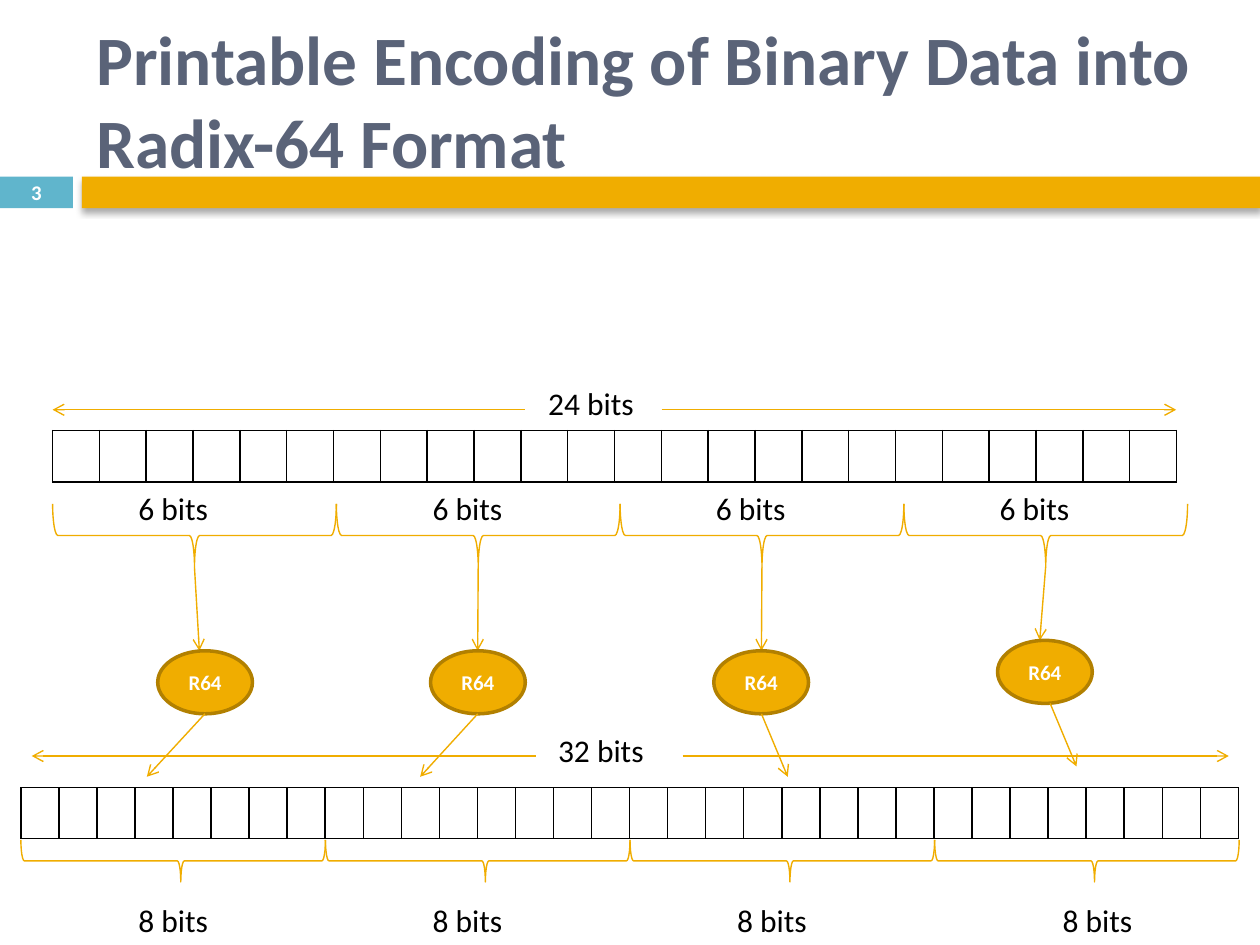
from pptx import Presentation
from pptx.dml.color import RGBColor
from pptx.enum.shapes import MSO_CONNECTOR as Link, MSO_SHAPE as Kind
from pptx.enum.text import MSO_ANCHOR as Anchor, PP_ALIGN as Align
from pptx.oxml import parse_xml
from pptx.oxml.ns import nsdecls
from pptx.util import Cm, Pt

GOLD = RGBColor(0xF0, 0xAD, 0x00)
BROWN = RGBColor(0xB2, 0x80, 0x00)
BLUE = RGBColor(0x60, 0xB5, 0xCC)
SLATE = RGBColor(0x5A, 0x63, 0x78)
WHITE = RGBColor(0xFF, 0xFF, 0xFF)
BLACK = RGBColor(0x00, 0x00, 0x00)
FONT = "Calibri"
THIN = Pt(0.79)
NS = nsdecls("a")

# Content, lengths in cm
TITLE = "Printable Encoding of Binary Data into Radix-64 Format"
PAGE = "3"

# Bit rows: count, left, top, width, height, cell fill
ROWS = [
    (24, 1.06, 8.68, 22.66, 1.04, None),
    (32, 0.42, 15.88, 24.56, 1.02, WHITE),
]
# Brace rows: left, top, width of each, height, adjustments
BRACES = [
    (1.06, 10.16, 5.72, 1.27, (0.083, 0.5)),
    (0.42, 16.93, 6.14, 0.85, (0.083, 0.475)),
]
# Spans: label, label left, label top, line y, (from, to) of each arrow
SPANS = [
    ("24 bits", 10.8, 7.62, 8.26, [(10.58, 1.06), (13.34, 23.71)]),
    ("32 bits", 11.0, 14.61, 15.24, [(10.8, 0.64), (13.76, 24.77)]),
]
# Group labels: text, top, lefts
GROUPS = [
    ("6 bits", 9.74, (2.54, 8.47, 14.18, 19.9)),
    ("8 bits", 18.03, (2.54, 8.47, 14.61, 21.17)),
]
# Encoders: left, top, x of arrow in, x of arrow out, x of its end
CODER = "R64"
CODERS = [
    (3.18, 13.12, 4.02, 4.13, 2.96),
    (8.68, 13.12, 9.63, 9.63, 8.47),
    (14.39, 13.12, 15.35, 15.35, 15.88),
    (20.11, 12.91, 20.96, 21.17, 21.7),
]
OVAL_W, OVAL_H, DROP = 1.91, 1.27, 1.27

deck = Presentation()
deck.slide_width, deck.slide_height = Cm(25.4), Cm(19.05)
slide = deck.slides.add_slide(deck.slide_layouts[6])
shapes = slide.shapes


def write(shape, text, size, color, bold=False, align=Align.LEFT, anchor=Anchor.TOP):
    frame = shape.text_frame
    frame.word_wrap = True
    frame.vertical_anchor = anchor
    para = frame.paragraphs[0]
    para.alignment = align
    run = para.add_run()
    run.text = text
    font = run.font
    font.name, font.size, font.bold = FONT, Pt(size), bold
    font.color.rgb = color


def label(text, x, y, w, h, size=18, color=BLACK, **look):
    box = shapes.add_textbox(Cm(x), Cm(y), Cm(w), Cm(h))
    write(box, text, size, color, **look)


def draw(kind, x, y, w, h, fill=None, line=None, width=THIN):
    shape = shapes.add_shape(kind, Cm(x), Cm(y), Cm(w), Cm(h))
    shape.shadow.inherit = False
    if fill is None:
        shape.fill.background()
    else:
        shape.fill.solid()
        shape.fill.fore_color.rgb = fill
    if line is None:
        shape.line.fill.background()
    else:
        shape.line.color.rgb = line
        shape.line.width = width
    return shape


def arrow(x1, y1, x2, y2):
    link = shapes.add_connector(Link.STRAIGHT, Cm(x1), Cm(y1), Cm(x2), Cm(y2))
    link.line.color.rgb = GOLD
    link.line.width = THIN
    link.line._get_or_add_ln().append(parse_xml(f'<a:tailEnd {NS} type="arrow"/>'))
    link._element.spPr.append(parse_xml(f"<a:effectLst {NS}/>"))


def brace(x, y, w, h, adjust):
    # Turned a quarter, so the width and height swap about the centre
    shape = draw(Kind.RIGHT_BRACE, x + (w - h) / 2, y + (h - w) / 2, h, w, line=GOLD)
    shape.rotation = 90
    for i, part in enumerate(adjust):
        shape.adjustments[i] = part


def bits(count, x, y, w, h, fill):
    table = shapes.add_table(1, count, Cm(x), Cm(y), Cm(w), Cm(h)).table
    table.first_row = table.horz_banding = False
    for col in table.columns:
        col.width = int(Cm(w) / count)
    for cell in table.iter_cells():
        props = cell._tc.get_or_add_tcPr()
        for side in "LRTB":
            props.append(parse_xml(
                f'<a:ln{side} {NS} w="{Pt(1)}"><a:solidFill>'
                f'<a:srgbClr val="{BLACK}"/></a:solidFill></a:ln{side}>'))
        if fill is None:
            cell.fill.background()
        else:
            cell.fill.solid()
            cell.fill.fore_color.rgb = fill


# Header band, title and page number
draw(Kind.RECTANGLE, 0, 3.56, 1.47, 0.64, fill=BLUE)
band = draw(Kind.RECTANGLE, 1.65, 3.56, 23.75, 0.64, fill=GOLD)
glow = band._element.spPr.find("{http://schemas.openxmlformats.org/drawingml/2006/main}effectLst")
glow.append(parse_xml(
    f'<a:outerShdw {NS} blurRad="{Pt(3.5)}" dist="{Pt(2.2)}" dir="5400000" rotWithShape="0">'
    f'<a:srgbClr val="{BLACK}"><a:alpha val="32000"/></a:srgbClr></a:outerShdw>'))
label(TITLE, 1.69, 0.64, 22.66, 2.74, 39.6, SLATE, bold=True, anchor=Anchor.MIDDLE)
label(PAGE, 0, 3.53, 1.47, 0.69, 11.9, WHITE, bold=True,
      align=Align.CENTER, anchor=Anchor.MIDDLE)

# Bit rows with their spans
for row in ROWS:
    bits(*row)
for text, x, y, level, ends in SPANS:
    for start, end in ends:
        arrow(start, level, end, level)
    label(text, x, y, 2.46, 1.02)

# Braces and group labels
for x, y, w, h, adjust in BRACES:
    for i in range(len(CODERS)):
        brace(x + i * w, y, w, h, adjust)
for text, y, lefts in GROUPS:
    for x in lefts:
        label(text, x, y, 2.11, 1.02)

# Encoders, fed from the tips of the upper braces
left, top, wide, high, _ = BRACES[0]
for i, (x, y, into, out, end) in enumerate(CODERS):
    arrow(left + (i + 0.5) * wide, top + high, into, y)
    oval = draw(Kind.OVAL, x, y, OVAL_W, OVAL_H, fill=GOLD, line=BROWN, width=Pt(2))
    write(oval, CODER, 12, WHITE, bold=True, align=Align.CENTER, anchor=Anchor.MIDDLE)
    arrow(out, y + OVAL_H, end, y + OVAL_H + DROP)

deck.save("out.pptx")
